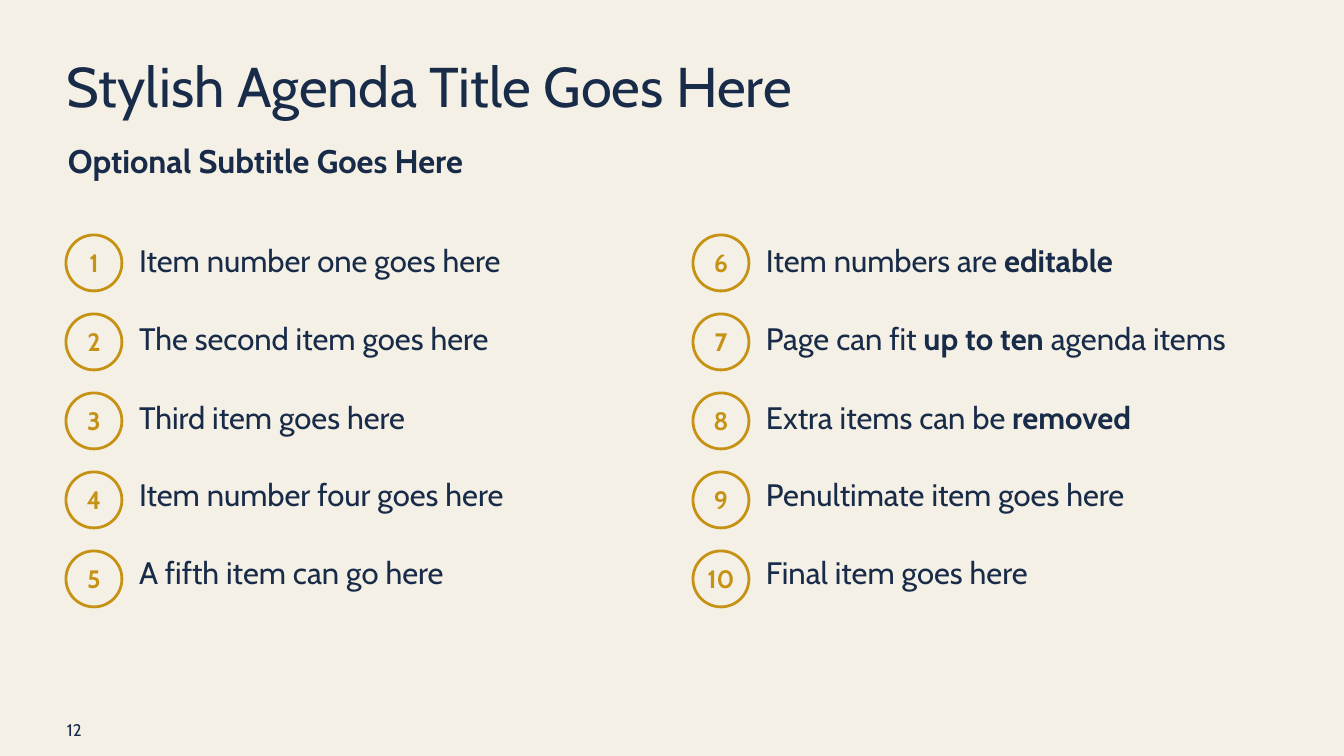
from pptx import Presentation
from pptx import util as u
from pptx.dml.color import RGBColor
from pptx.enum import shapes, text

PX_PER_INCH = 134.4
FONT = "Cabin"
CREAM, NAVY, GOLD = "F5F0E5", "182B49", "C69214"
COLUMN_STEP, CIRCLE_STEP, ITEM_STEP = 627, 79, 78
ROWS = 5
ITEMS = [
    [("Item number one goes here", False)],
    [("The second item goes here", False)],
    [("Third item goes here", False)],
    [("Item number four goes here", False)],
    [("A fifth item can go here", False)],
    [("Item numbers are ", False), ("editable", True)],
    [("Page can fit ", False), ("up to ten ", True), ("agenda items", False)],
    [("Extra items can be ", False), ("removed", True)],
    [("Penultimate item goes here", False)],
    [("Final item goes here", False)],
]


def px(length):
    """Turn pixels into EMU."""
    return u.Emu(round(length * u.Inches(1) / PX_PER_INCH))


def color(value):
    """Turn a hex string into a colour."""
    return RGBColor.from_string(value)


def place(shape, left, top, width, height):
    """Move and size a shape in pixels."""
    shape.left, shape.top = px(left), px(top)
    shape.width, shape.height = px(width), px(height)


def write(shape, spans, size, ink=NAVY, align=text.PP_ALIGN.LEFT,
          anchor=text.MSO_ANCHOR.MIDDLE, spacing=1.0):
    """Fill a shape with one paragraph of (wording, bold) spans."""
    frame = shape.text_frame
    frame.auto_size = text.MSO_AUTO_SIZE.NONE
    frame.word_wrap = True
    frame.vertical_anchor = anchor
    frame.margin_left = frame.margin_right = 0
    frame.margin_top = frame.margin_bottom = 0
    para = frame.paragraphs[0]
    para.alignment = align
    para.line_spacing = spacing
    para.space_before = u.Pt(0)
    for wording, bold in spans:
        span = para.add_run()
        span.text = wording
        span.font.name = FONT
        span.font.size = u.Pt(size)
        span.font.bold = bold
        span.font.color.rgb = color(ink)


def add_heading(page):
    """Set the title and subtitle placeholders."""
    title, subtitle = page.shapes.title, page.placeholders[1]
    place(title, 67, 65, 1210, 76)
    write(title, [("Stylish Agenda Title Goes Here", False)], 30,
          anchor=text.MSO_ANCHOR.TOP, spacing=0.8)
    place(subtitle, 68, 141, 1210, 63)
    write(subtitle, [("Optional Subtitle Goes Here", True)], 17.5,
          anchor=text.MSO_ANCHOR.TOP)


def add_text(page, left, top, width, height, spans, size, spacing=1.0):
    """Add a text box."""
    box = page.shapes.add_textbox(0, 0, 0, 0)
    place(box, left, top, width, height)
    write(box, spans, size, spacing=spacing)


def add_number(page, left, top, number):
    """Add an outlined circle holding an item number."""
    circle = page.shapes.add_shape(shapes.MSO_SHAPE.OVAL, 0, 0, 0, 0)
    place(circle, left, top, 56, 56)
    circle.shadow.inherit = False
    circle.fill.background()
    circle.line.color.rgb = color(GOLD)
    circle.line.width = u.Pt(1.5)
    write(circle, [(str(number), True)], 13.5, GOLD, text.PP_ALIGN.CENTER)


def add_agenda(page):
    """Lay the numbered items out in two columns."""
    for index, spans in enumerate(ITEMS):
        column, row = divmod(index, ROWS)
        shift = column * COLUMN_STEP
        add_number(page, 66 + shift, 235 + row * CIRCLE_STEP, index + 1)
        add_text(page, 139 + shift, 234 + row * ITEM_STEP, 511, 58,
                 spans, 16.6, spacing=0.9)


def main():
    """Build and save the agenda slide."""
    deck = Presentation()
    deck.slide_width, deck.slide_height = px(1344), px(756)
    page = deck.slides.add_slide(deck.slide_layouts[0])
    page.background.fill.solid()
    page.background.fill.fore_color.rgb = color(CREAM)
    add_heading(page)
    add_agenda(page)
    add_text(page, 67, 702, 48, 55, [("12", False)], 9)
    deck.save("out.pptx")


if __name__ == "__main__":
    main()
